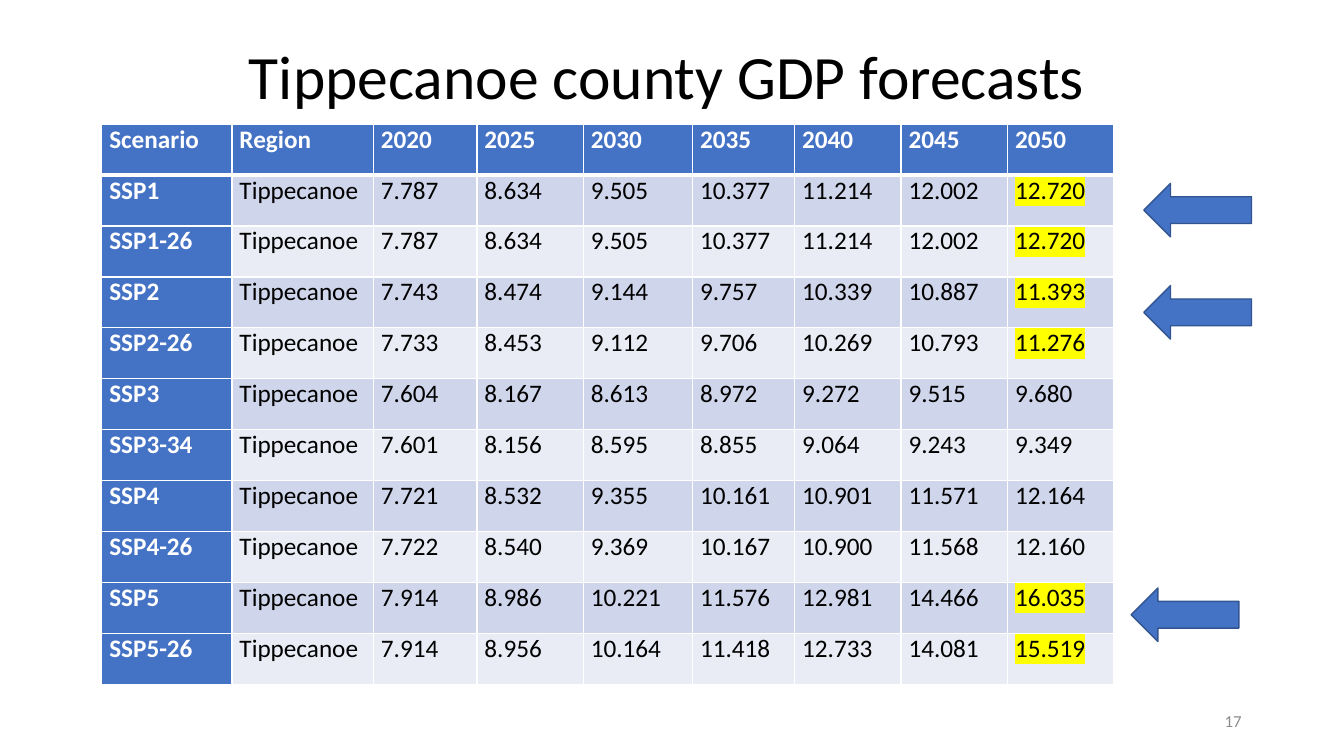
import lxml.etree
import pptx
import pptx.dml.color
import pptx.enum.shapes
import pptx.enum.text
import pptx.oxml.ns
import pptx.util

Pt = pptx.util.Pt
ALIGN = pptx.enum.text.PP_ALIGN
MIDDLE = pptx.enum.text.MSO_ANCHOR.MIDDLE

COLORS = {
    "text": "000000",
    "white": "FFFFFF",
    "blue": "4472C4",
    "outline": "325491",
    "odd_row": "CFD5EA",
    "even_row": "E9EBF5",
    "highlight": "FFFF00",
    "page_number": "8C8C8C",
}

REGION = "Tippecanoe"
HEADINGS = ["Scenario", "Region", "2020", "2025", "2030", "2035", "2040", "2045", "2050"]
FORECASTS = {
    "SSP1": [7.787, 8.634, 9.505, 10.377, 11.214, 12.002, 12.720],
    "SSP1-26": [7.787, 8.634, 9.505, 10.377, 11.214, 12.002, 12.720],
    "SSP2": [7.743, 8.474, 9.144, 9.757, 10.339, 10.887, 11.393],
    "SSP2-26": [7.733, 8.453, 9.112, 9.706, 10.269, 10.793, 11.276],
    "SSP3": [7.604, 8.167, 8.613, 8.972, 9.272, 9.515, 9.680],
    "SSP3-34": [7.601, 8.156, 8.595, 8.855, 9.064, 9.243, 9.349],
    "SSP4": [7.721, 8.532, 9.355, 10.161, 10.901, 11.571, 12.164],
    "SSP4-26": [7.722, 8.540, 9.369, 10.167, 10.900, 11.568, 12.160],
    "SSP5": [7.914, 8.986, 10.221, 11.576, 12.981, 14.466, 16.035],
    "SSP5-26": [7.914, 8.956, 10.164, 11.418, 12.733, 14.081, 15.519],
}
HIGHLIGHTED_SCENARIOS = {"SSP1", "SSP1-26", "SSP2", "SSP2-26", "SSP5", "SSP5-26"}
COLUMN_WIDTHS = [93, 101, 74, 76, 78, 73, 76, 76, 76]
ROW_HEIGHT = 36.4
ARROW_POSITIONS = [(817, 204), (817, 131), (808, 420)]


def rgb(name):
    return pptx.dml.color.RGBColor.from_string(COLORS[name])


def add_color(parent, tag, name):
    """Append a DrawingML element that holds one colour."""
    holder = lxml.etree.SubElement(parent, pptx.oxml.ns.qn(tag))
    lxml.etree.SubElement(holder, pptx.oxml.ns.qn("a:srgbClr"), val=COLORS[name])


def write_text(frame, text, size=18, color="text", bold=False, align=ALIGN.LEFT,
               highlight=None, line_spacing=None):
    paragraph = frame.paragraphs[0]
    paragraph.alignment = align
    paragraph.line_spacing = line_spacing
    run = paragraph.add_run()
    run.text = text
    run.font.size = Pt(size)
    run.font.bold = bold
    run.font.color.rgb = rgb(color)
    if highlight:
        add_color(run.font._element, "a:highlight", highlight)
    run.font.name = "Calibri"


def set_borders(cell, top=1, bottom=1):
    properties = cell._tc.get_or_add_tcPr()
    for side, width in (("L", 1), ("R", 1), ("T", top), ("B", bottom)):
        border = lxml.etree.SubElement(
            properties, pptx.oxml.ns.qn(f"a:ln{side}"), w=str(Pt(width)))
        add_color(border, "a:solidFill", "white")


def fill_cell(cell, text, fill, top=1, bottom=1, **text_format):
    set_borders(cell, top, bottom)
    cell.fill.solid()
    cell.fill.fore_color.rgb = rgb(fill)
    cell.margin_left = cell.margin_right = Pt(5.4)
    cell.margin_top = cell.margin_bottom = Pt(0)
    write_text(cell.text_frame, text, align=ALIGN.JUSTIFY, **text_format)


def add_title(slide, text):
    title = slide.shapes.title
    title.left, title.top, title.width, title.height = Pt(59), Pt(29), Pt(835), Pt(55)
    title.text_frame.vertical_anchor = MIDDLE
    title.text_frame.auto_size = pptx.enum.text.MSO_AUTO_SIZE.NONE
    write_text(title.text_frame, text, size=44, align=ALIGN.CENTER, line_spacing=0.9)


def add_forecast_table(slide):
    row_count = len(FORECASTS) + 1
    table = slide.shapes.add_table(
        row_count, len(HEADINGS), Pt(72.7), Pt(88.6),
        Pt(sum(COLUMN_WIDTHS)), Pt(ROW_HEIGHT * row_count)).table
    table.first_col = True
    for column, width in zip(table.columns, COLUMN_WIDTHS):
        column.width = Pt(width)
    for row in table.rows:
        row.height = Pt(ROW_HEIGHT)

    for column, heading in enumerate(HEADINGS):
        fill_cell(table.cell(0, column), heading, "blue", bottom=3,
                  color="white", bold=True)
    for row, (scenario, values) in enumerate(FORECASTS.items(), start=1):
        top = 3 if row == 1 else 1
        band = "odd_row" if row % 2 else "even_row"
        fill_cell(table.cell(row, 0), scenario, "blue", top=top,
                  color="white", bold=True)
        entries = [REGION] + [f"{value:.3f}" for value in values]
        for column, entry in enumerate(entries, start=1):
            marked = column == len(entries) and scenario in HIGHLIGHTED_SCENARIOS
            fill_cell(table.cell(row, column), entry, band, top=top,
                      highlight="highlight" if marked else None)


def add_left_arrow(slide, left, top):
    arrow = slide.shapes.add_shape(
        pptx.enum.shapes.MSO_SHAPE.LEFT_ARROW, Pt(left), Pt(top), Pt(77), Pt(38.2))
    arrow.shadow.inherit = False
    arrow.fill.solid()
    arrow.fill.fore_color.rgb = rgb("blue")
    arrow.line.color.rgb = rgb("outline")
    arrow.line.width = Pt(1)


def add_page_number(slide, number):
    box = slide.shapes.add_textbox(Pt(678), Pt(500.5), Pt(216), Pt(28.8))
    box.text_frame.word_wrap = True
    box.text_frame.vertical_anchor = MIDDLE
    write_text(box.text_frame, number, size=12, color="page_number", align=ALIGN.RIGHT)


def main():
    presentation = pptx.Presentation()
    presentation.slide_width, presentation.slide_height = Pt(960), Pt(540)
    slide = presentation.slides.add_slide(presentation.slide_layouts[5])
    add_title(slide, "Tippecanoe county GDP forecasts")
    add_forecast_table(slide)
    for left, top in ARROW_POSITIONS:
        add_left_arrow(slide, left, top)
    add_page_number(slide, "17")
    presentation.save("out.pptx")


if __name__ == "__main__":
    main()
